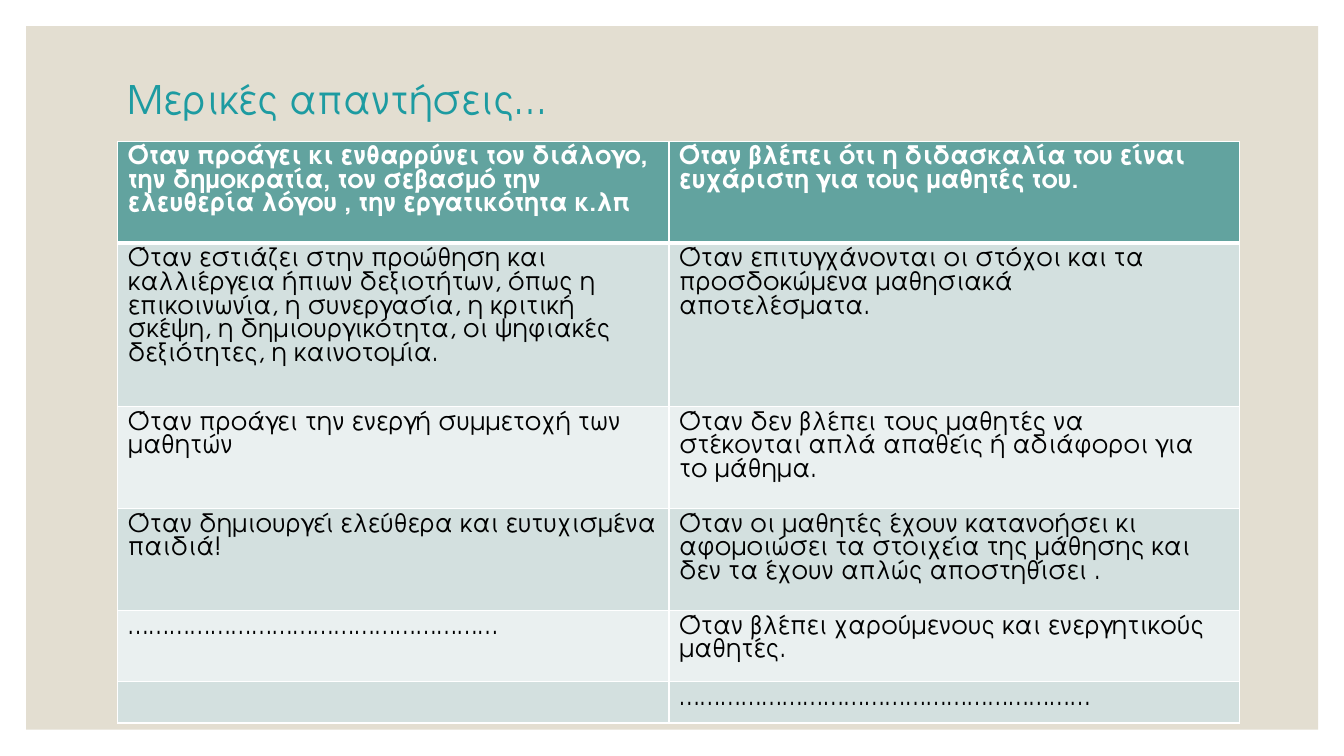
from lxml.etree import SubElement as Sub
from pptx import Presentation
from pptx.dml.color import RGBColor as Rgb
from pptx.enum.shapes import MSO_SHAPE as Kind
from pptx.enum.text import MSO_ANCHOR as Anchor
from pptx.oxml.ns import qn
from pptx.util import Cm, Pt


def tint(code):
    return Rgb.from_string(code)


class Deck:
    """Holds the style and the current slide, and draws each kind of element."""

    face = "TeX Gyre Adventor"
    body = {"size": Pt(18), "bold": False}
    head = {"size": Pt(18), "bold": True}
    title = {"size": Pt(28), "bold": False}

    def __init__(self, wide, high):
        self.prs = Presentation()
        self.prs.slide_width, self.prs.slide_height = Cm(wide), Cm(high)
        self.slide = self.prs.slides.add_slide(self.prs.slide_layouts[6])

    def fill_text(self, frame, lines, form, color):
        frame.word_wrap = True
        for i, line in enumerate(lines):
            para = frame.add_paragraph() if i else frame.paragraphs[0]
            run = para.add_run()
            run.text = line
            for key, value in {"name": self.face, **form}.items():
                setattr(run.font, key, value)
            run.font.color.rgb = tint(color)

    def panel(self, box, color):
        shape = self.slide.shapes.add_shape(Kind.RECTANGLE, *map(Cm, box))
        shape.shadow.inherit = False
        shape.fill.solid()
        shape.fill.fore_color.rgb = tint(color)
        shape.line.fill.background()

    def text(self, box, line, form, color):
        frame = self.slide.shapes.add_textbox(*map(Cm, box)).text_frame
        self.fill_text(frame, [line], form, color)
        frame.vertical_anchor = Anchor.MIDDLE
        frame.paragraphs[0].line_spacing = 0.9

    def edge(self, cell, side, width, color):
        line = Sub(cell._tc.get_or_add_tcPr(), qn(f"a:ln{side}"), w=str(Pt(width)))
        Sub(Sub(line, qn("a:solidFill")), qn("a:srgbClr"), val=color)

    def table(self, spot, cols, highs, rows):
        size = sum(cols), sum(highs)
        grid = self.slide.shapes.add_table(
            len(rows), len(cols), *map(Cm, spot + size)).table
        for col, wide in zip(grid.columns, cols):
            col.width = Cm(wide)
        for r, row in enumerate(rows):
            grid.rows[r].height = Cm(highs[r])
            fill = ("EAF0F0", "D3E0DF")[r % 2] if r else "62A39F"
            form, color = (self.body, "000000") if r else (self.head, "FFFFFF")
            for c, lines in enumerate(row):
                cell = grid.cell(r, c)
                thick = {"L": 1, "R": 1, "T": 3 if r == 1 else 1, "B": 1 if r else 3}
                for side, width in thick.items():
                    self.edge(cell, side, width, "FFFFFF")
                cell.fill.solid()
                cell.fill.fore_color.rgb = tint(fill)
                self.fill_text(cell.text_frame, lines, form, color)


ROWS = [
    [["Όταν προάγει κι ενθαρρύνει τον διάλογο, την δημοκρατία, τον σεβασμό "
      "την ελευθερία λόγου , την εργατικότητα κ.λπ"],
     ["Όταν βλέπει ότι η διδασκαλία του είναι",
      "ευχάριστη για τους μαθητές του."]],
    [["Όταν εστιάζει στην προώθηση και καλλιέργεια ήπιων δεξιοτήτων, όπως η "
      "επικοινωνία, η συνεργασία, η κριτική σκέψη, η δημιουργικότητα, "
      "οι ψηφιακές δεξιότητες, η καινοτομία."],
     ["Όταν επιτυγχάνονται οι στόχοι και τα",
      "προσδοκώμενα μαθησιακά",
      "αποτελέσματα."]],
    [["Όταν προάγει την ενεργή συμμετοχή των μαθητών"],
     ["Όταν δεν βλέπει τους μαθητές να",
      "στέκονται απλά απαθείς ή αδιάφοροι για",
      "το μάθημα."]],
    [["Όταν δημιουργεί ελεύθερα και ευτυχισμένα παιδιά!"],
     ["Όταν οι μαθητές έχουν κατανοήσει κι",
      "αφομοιώσει τα στοιχεία της μάθησης και",
      "δεν τα έχουν απλώς αποστηθίσει ."]],
    [["………………………………………………"],
     ["Όταν βλέπει χαρούμενους και ενεργητικούς μαθητές."]],
    [[], ["……………………………………………………"]],
]


def main():
    deck = Deck(33.87, 19.05)
    deck.panel((0.66, 0.66, 32.56, 17.73), "E3DED1")
    deck.text((2.97, 1.78, 27.94, 1.57), "Μερικές απαντήσεις…", deck.title, "1D9BA1")
    deck.table((2.97, 3.56), (13.89, 14.38), (2.57, 4.11, 2.57, 2.57, 1.8, 1.04), ROWS)
    deck.prs.save("out.pptx")


if __name__ == "__main__":
    main()
